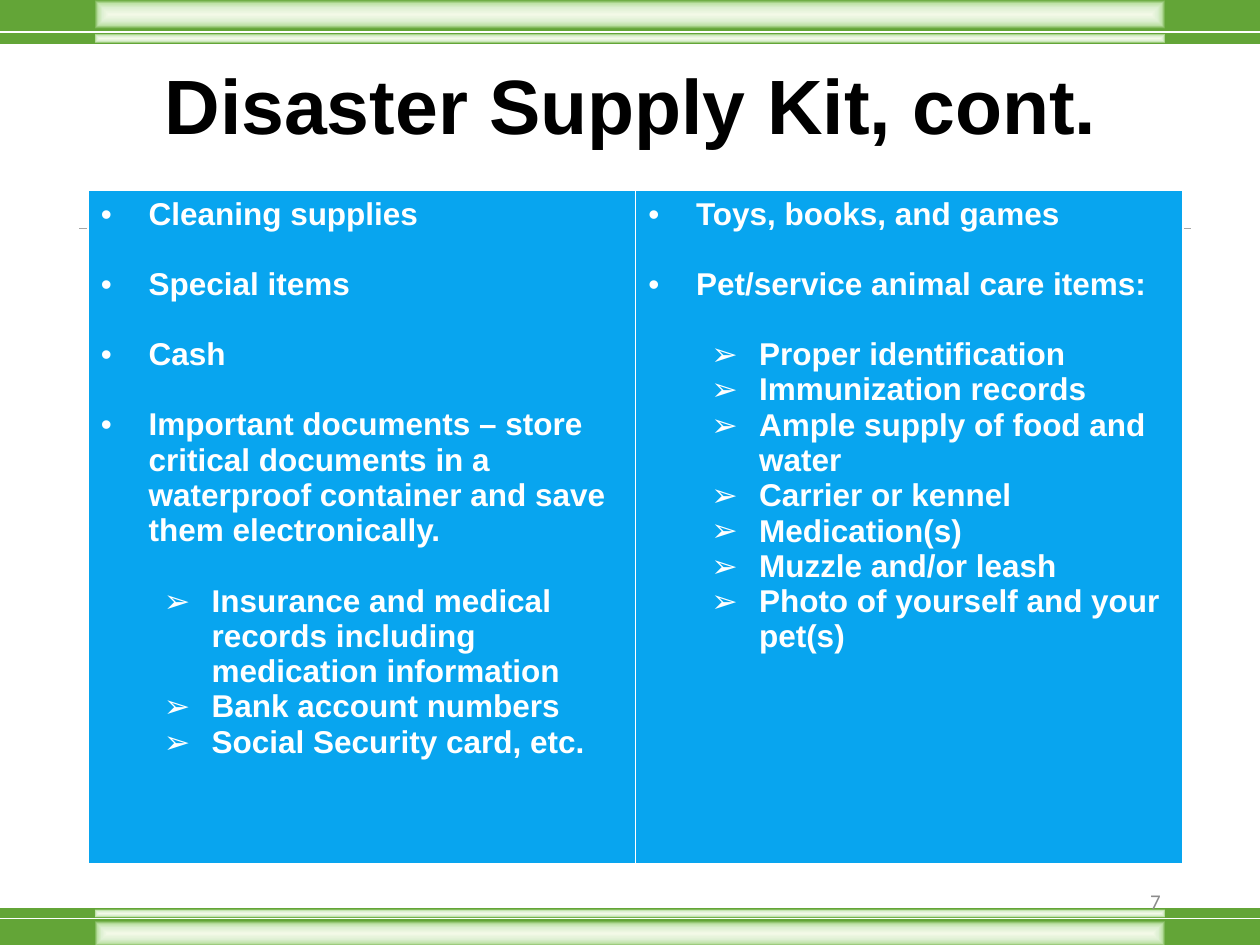
"""Build the second disaster supply kit slide: banded frame, title and a two-column checklist."""
from pptx import Presentation
from pptx.dml.color import RGBColor as RGB
from pptx.enum.shapes import MSO_CONNECTOR as LINK, MSO_SHAPE as SHAPE
from pptx.enum.text import MSO_ANCHOR as ANCHOR, PP_ALIGN as ALIGN
from pptx.oxml import parse_xml
from pptx.oxml.ns import nsdecls
from pptx.util import Inches, Pt

TITLE = "Disaster Supply Kit, cont."
NUMBER = "7"
COLUMNS = [
    [
        (0, "Cleaning supplies"),
        (0, "Special items"),
        (0, "Cash"),
        (0, "Important documents – store critical documents in a "
            "waterproof container and save them electronically."),
        (1, "Insurance and medical records including medication information"),
        (1, "Bank account numbers"),
        (1, "Social Security card, etc."),
    ],
    [
        (0, "Toys, books, and games"),
        (0, "Pet/service animal care items:"),
        (1, "Proper identification"),
        (1, "Immunization records"),
        (1, "Ample supply of food and water"),
        (1, "Carrier or kennel"),
        (1, "Medication(s)"),
        (1, "Muzzle and/or leash"),
        (1, "Photo of yourself and your pet(s)"),
    ],
]
BANDS = [(0.26, 0.09), (-0.02, 0.27), (7.21, 0.08), (7.29, 0.24)]
STOPS = [(0, "F3F9E7"), (37, "DFF0D4"), (64, "BFE2A8"), (85, "63A537")]
LEVELS = [("•", 0.38), ("➢", 0.88)]
HANG = 0.38
EDGES = [("lnL", 1), ("lnR", 1), ("lnT", 1), ("lnB", 3)]

BLACK = RGB(0x00, 0x00, 0x00)
WHITE = RGB(0xFF, 0xFF, 0xFF)
BLUE = RGB(0x08, 0xA5, 0xEF)
GRAY = RGB(0x8C, 0x8C, 0x8C)
RULE = RGB(0xA6, 0xA6, 0xA6)


def add_run(para, text, size, color, bold=False, face="Arial"):
    run = para.add_run()
    run.text = text
    font = run.font
    font.name, font.size, font.bold = face, Pt(size), bold
    font.color.rgb = color


def add_rule(slide):
    rule = slide.shapes.add_connector(
        LINK.STRAIGHT, Inches(0.63), Inches(1.81), Inches(9.45), Inches(1.81))
    rule.line.color.rgb = RULE
    rule.line.width = Pt(0.5)
    rule._element.spPr.append(parse_xml(f"<a:effectLst {nsdecls('a')}/>"))


def add_band(slide, top, height):
    band = slide.shapes.add_shape(
        SHAPE.RECTANGLE, 0, Inches(top), Inches(10), Inches(height))
    band.shadow.inherit = False
    band.line.fill.background()
    stops = "".join(
        f'<a:gs pos="{pos * 1000}"><a:srgbClr val="{color}"/></a:gs>'
        for pos, color in STOPS)
    band._element.spPr.insert(2, parse_xml(
        f'<a:gradFill {nsdecls("a")} rotWithShape="1"><a:gsLst>{stops}</a:gsLst>'
        '<a:path path="shape"><a:fillToRect l="50000" t="50000" r="50000" b="50000"/>'
        '</a:path></a:gradFill>'))


def add_title(slide):
    title = slide.shapes.title
    title.left, title.top = Inches(0.7), Inches(0.11)
    title.width, title.height = Inches(8.62), Inches(1.82)
    frame = title.text_frame
    frame.vertical_anchor = ANCHOR.MIDDLE
    frame.margin_bottom = Inches(0.35)
    para = frame.paragraphs[0]
    para.alignment = ALIGN.CENTER
    para.line_spacing = 0.9
    add_run(para, TITLE, 44, BLACK, True)


def fill_cell(cell, items):
    cell.fill.solid()
    cell.fill.fore_color.rgb = BLUE
    props = cell._tc.get_or_add_tcPr()
    for place, (edge, width) in enumerate(EDGES):
        props.insert(place, parse_xml(
            f'<a:{edge} {nsdecls("a")} w="{Pt(width)}"><a:solidFill>'
            f'<a:srgbClr val="{WHITE}"/></a:solidFill></a:{edge}>'))
    frame = cell.text_frame
    last = None
    for level, text in items:
        para = frame.paragraphs[0] if last is None else frame.add_paragraph()
        para.level = level
        para.space_before = Pt(20 if last == 0 else 0)
        mark, left = LEVELS[level]
        style = para._p.get_or_add_pPr()
        style.set("marL", str(Inches(left)))
        style.set("indent", str(-Inches(HANG)))
        style.append(parse_xml(f'<a:buFont {nsdecls("a")} typeface="Arial"/>'))
        style.append(parse_xml(f'<a:buChar {nsdecls("a")} char="{mark}"/>'))
        add_run(para, text, 18, WHITE, True)
        last = level


def add_list(slide):
    table = slide.shapes.add_table(
        1, len(COLUMNS), Inches(0.7), Inches(1.51), Inches(8.69), Inches(5.36)).table
    table.first_row = table.horz_banding = False
    for cell, items in zip(table.rows[0].cells, COLUMNS):
        fill_cell(cell, items)


def add_number(slide):
    box = slide.shapes.add_textbox(Inches(7.06), Inches(6.95), Inches(2.25), Inches(0.4))
    frame = box.text_frame
    frame.word_wrap = True
    frame.vertical_anchor = ANCHOR.MIDDLE
    para = frame.paragraphs[0]
    para.alignment = ALIGN.RIGHT
    add_run(para, NUMBER, 12, GRAY, face="Calibri")


def main():
    deck = Presentation()
    deck.slide_width, deck.slide_height = Inches(10), Inches(7.5)
    slide = deck.slides.add_slide(deck.slide_layouts[5])
    add_rule(slide)
    for top, height in BANDS:
        add_band(slide, top, height)
    add_title(slide)
    add_list(slide)
    add_number(slide)
    deck.save("out.pptx")


if __name__ == "__main__":
    main()
